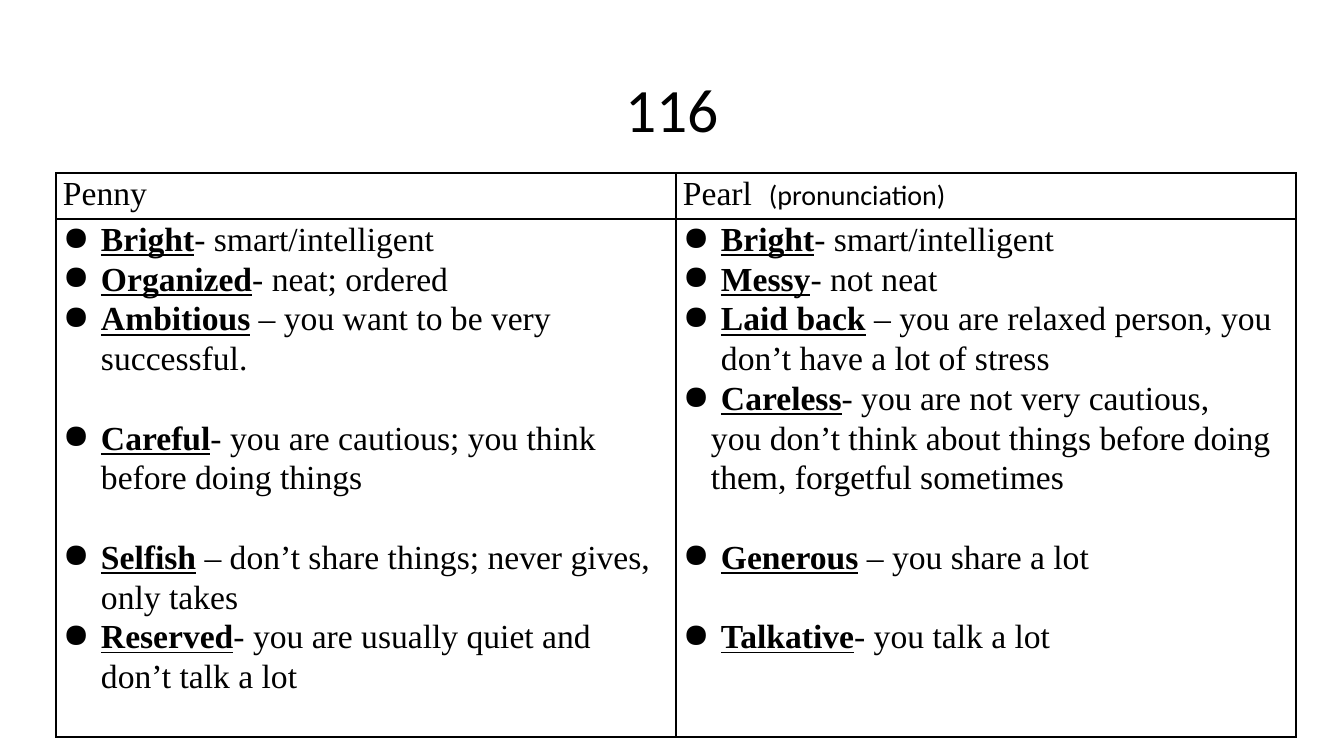
from dataclasses import dataclass

from lxml import etree
from pptx import Presentation
from pptx import util as u
from pptx.dml.color import RGBColor
from pptx.enum import text
from pptx.oxml.ns import qn

SCALE = 914400 / 100.8
BLACK = "000000"
SERIF, SANS = "Times New Roman", "Calibri"
LINE_GAP = 28.4


@dataclass(frozen=True)
class Trait:
    """A personality word with its meaning; without a word it is a plain line."""
    word: str
    meaning: str
    gap: bool = False


PENNY = [
    Trait("Bright", "- smart/intelligent"),
    Trait("Organized", "- neat; ordered"),
    Trait("Ambitious", " – you want to be very successful."),
    Trait("Careful", "- you are cautious; you think before doing things", gap=True),
    Trait("Selfish", " – don’t share things; never gives, only takes", gap=True),
    Trait("Reserved", "- you are usually quiet and don’t talk a lot"),
]
PEARL = [
    Trait("Bright", "- smart/intelligent"),
    Trait("Messy", "- not neat"),
    Trait("Laid back", " – you are relaxed person, you don’t have a lot of stress"),
    Trait("Careless", "- you are not very cautious,"),
    Trait("", "you don’t think about things before doing them, forgetful sometimes"),
    Trait("Generous", " – you share a lot", gap=True),
    Trait("Talkative", "- you talk a lot", gap=True),
]


def px(n: int) -> u.Emu:
    """Turn pixels into EMU."""
    return u.Emu(round(n * SCALE))


def color(value: str) -> RGBColor:
    """Turn a hex string into a colour."""
    return RGBColor.from_string(value)


def add_run(p, words: str, size: int = 24, font: str = SERIF,
            strong: bool = False, spacing: int = 0) -> None:
    """Add a formatted run to a paragraph."""
    r = p.add_run()
    r.text = words
    r.font.size, r.font.name = u.Pt(size), font
    r.font.bold = r.font.underline = strong
    r.font.color.rgb = color(BLACK)
    if spacing:
        r.font._element.set("spc", str(spacing))


def indent(p, left: int, bullet: str = "") -> None:
    """Indent a paragraph, hanging it from a bullet when one is given."""
    pPr = p._p.get_or_add_pPr()
    pPr.set("marL", str(px(left)))
    pPr.set("indent", str(-px(left) if bullet else 0))
    if bullet:
        etree.SubElement(pPr, qn("a:buChar")).set("char", bullet)


def fill_traits(cell, traits: list[Trait]) -> None:
    """Write a list of traits into a cell."""
    tf = cell.text_frame
    for i, trait in enumerate(traits):
        p = tf.add_paragraph() if i else tf.paragraphs[0]
        p.line_spacing = 1.07
        p.space_before = u.Pt(LINE_GAP if trait.gap else 0)
        if trait.word:
            indent(p, 38, "●")
            add_run(p, trait.word, strong=True)
        else:
            indent(p, 28)
        add_run(p, trait.meaning)


def format_cell(cell) -> None:
    """Give a cell its margins, thin black borders and no fill."""
    cell.margin_left = cell.margin_right = px(7)
    cell.margin_top = cell.margin_bottom = 0
    tcPr = cell._tc.get_or_add_tcPr()
    for side in ("lnL", "lnR", "lnT", "lnB"):
        ln = etree.SubElement(tcPr, qn(f"a:{side}"), w=str(u.Pt(1)))
        solid = etree.SubElement(ln, qn("a:solidFill"))
        etree.SubElement(solid, qn("a:srgbClr"), val=BLACK)
    cell.fill.background()


def add_title(s, words: str) -> None:
    """Place the slide title."""
    sp = s.shapes.title
    sp.left, sp.top, sp.width, sp.height = px(93), px(40), px(1159), px(146)
    tf = sp.text_frame
    tf.vertical_anchor = text.MSO_ANCHOR.MIDDLE
    p = tf.paragraphs[0]
    p.alignment, p.line_spacing = text.PP_ALIGN.CENTER, 0.9
    add_run(p, words, size=44, font=SANS)


def add_comparison(s) -> None:
    """Add the table that compares Penny with Pearl."""
    heights = (46, 518)
    table = s.shapes.add_table(2, 2, px(56), px(173), px(1240), px(sum(heights))).table
    table.first_row = table.horz_banding = False
    for row, height in zip(table.rows, heights):
        row.height = px(height)
    for cell in table.iter_cells():
        format_cell(cell)
    for col, (name, traits) in enumerate((("Penny", PENNY), ("Pearl", PEARL))):
        p = table.cell(0, col).text_frame.paragraphs[0]
        p.alignment, p.line_spacing = text.PP_ALIGN.JUSTIFY, 1.07
        add_run(p, name)
        fill_traits(table.cell(1, col), traits)
    add_run(p, " ", spacing=600)
    add_run(p, "(pronunciation)", size=20, font=SANS)


def main() -> None:
    """Build the slide and save it."""
    prs = Presentation()
    prs.slide_width, prs.slide_height = px(1344), px(756)
    s = prs.slides.add_slide(prs.slide_layouts[5])
    add_title(s, "116")
    add_comparison(s)
    prs.save("out.pptx")


if __name__ == "__main__":
    main()
